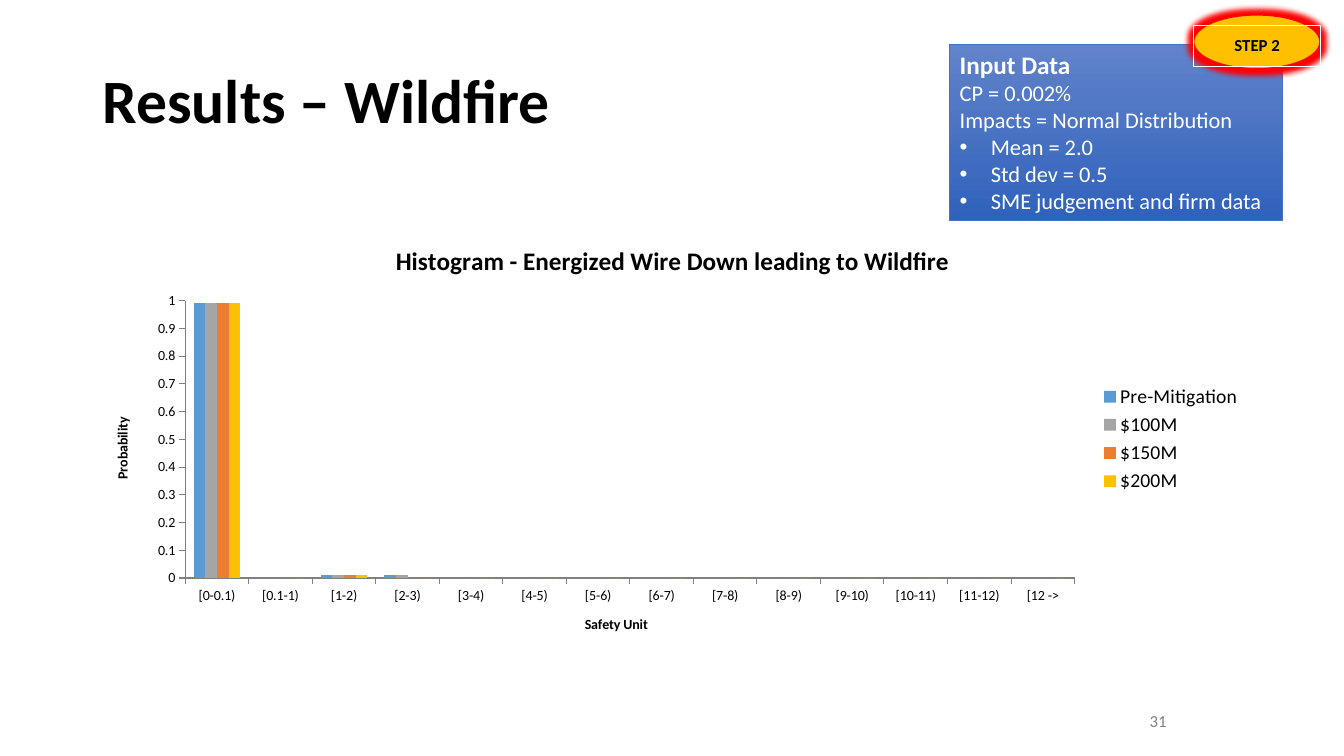
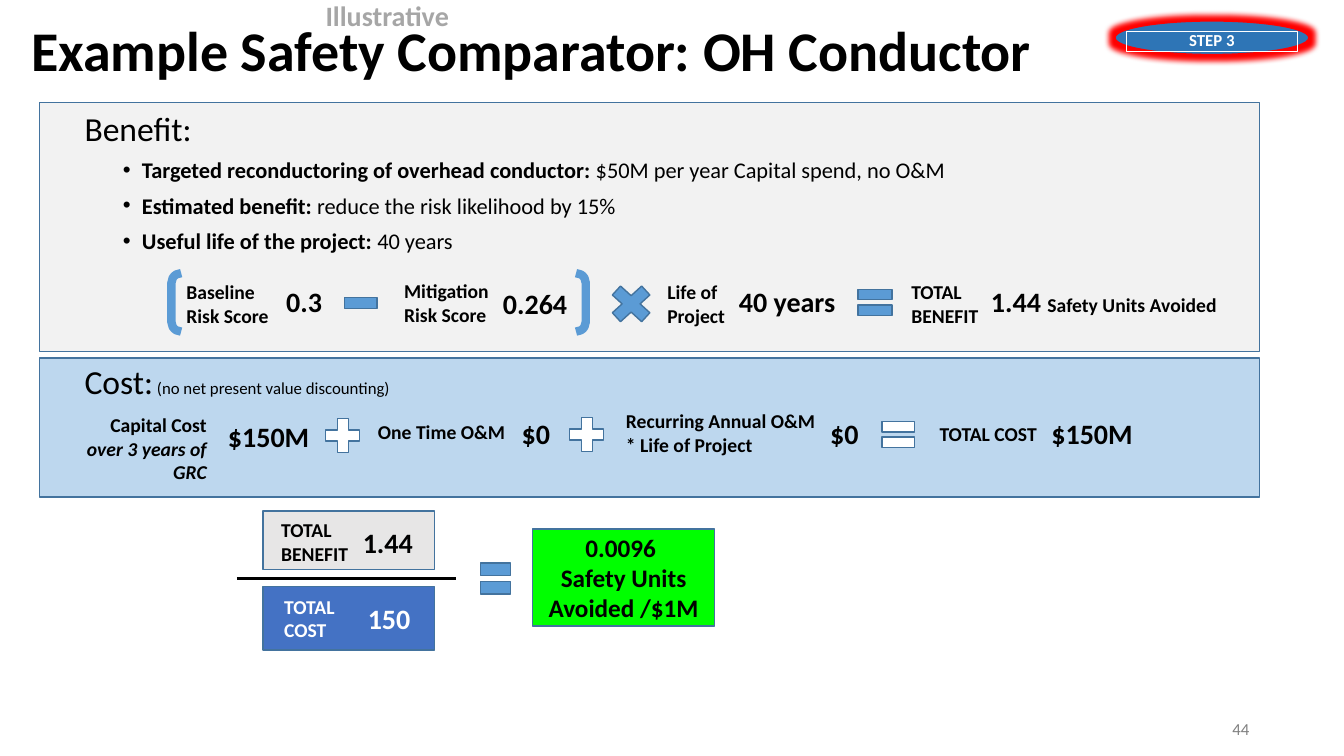
from lxml import etree
from pptx import Presentation
from pptx.chart.data import CategoryChartData
from pptx.dml.color import RGBColor
from pptx.enum.chart import XL_CHART_TYPE, XL_LEGEND_POSITION, XL_TICK_MARK
from pptx.enum.shapes import MSO_CONNECTOR, MSO_SHAPE
from pptx.enum.text import MSO_ANCHOR, PP_ALIGN
from pptx.oxml.ns import qn
from pptx.util import Inches, Pt

CLUSTERED = XL_CHART_TYPE.COLUMN_CLUSTERED
LEGEND_RIGHT = XL_LEGEND_POSITION.RIGHT
TICK_OUTSIDE = XL_TICK_MARK.OUTSIDE
STRAIGHT = MSO_CONNECTOR.STRAIGHT
RECTANGLE, ELLIPSE = MSO_SHAPE.RECTANGLE, MSO_SHAPE.OVAL
MINUS, TIMES = MSO_SHAPE.MATH_MINUS, MSO_SHAPE.MATH_MULTIPLY
EQUAL, PLUS = MSO_SHAPE.MATH_EQUAL, MSO_SHAPE.MATH_PLUS
BRACKETS = MSO_SHAPE.DOUBLE_BRACKET
TOP, MIDDLE = MSO_ANCHOR.TOP, MSO_ANCHOR.MIDDLE
LEFT, CENTER, RIGHT = PP_ALIGN.LEFT, PP_ALIGN.CENTER, PP_ALIGN.RIGHT

FONT = "Calibri"
COLORS = {
    "black": "000000", "white": "FFFFFF", "page number": "808080",
    "illustrative": "A6A6A6", "red": "FF0000", "outline": "43739E",
    "sky": "5B9BD5", "gray": "A5A5A5", "orange": "ED7D31", "gold": "FFC000",
    "royal": "4472C4", "deep blue": "2E75B6", "benefit": "F2F2F2",
    "cost": "BDD7EE", "ratio top": "E7E6E6", "result": "00FF00",
    "gradient top": "6183CB", "gradient bottom": "3062BB",
}
LABEL = {"size": Pt(14), "bold": True}
NUMBER = {"size": Pt(20), "bold": True}

BINS = ["[0-0.1)", "[0.1-1)", *(f"[{n}-{n + 1})" for n in range(1, 12)), "[12 ->"]
SERIES = [
    ("Pre-Mitigation", "sky", [0.99, 0, 0.01, 0.01]),
    ("$100M", "gray", [0.99, 0, 0.01, 0.01]),
    ("$150M", "orange", [0.99, 0, 0.01]),
    ("$200M", "gold", [0.99, 0, 0.01]),
]


def rgb(name):
    return RGBColor.from_string(COLORS[name])


def inches(values):
    return [Inches(value) for value in values]


def set_values(target, values):
    for name, value in values.items():
        setattr(target, name, value)


def set_font(font, color="black", **values):
    set_values(font, {"name": FONT, **values})
    font.color.rgb = rgb(color)


def add_bullet(para, indent, hang):
    properties = para._p.get_or_add_pPr()
    properties.set("marL", str(Inches(indent)))
    properties.set("indent", str(-Inches(hang)))
    etree.SubElement(properties, qn("a:buFont"), typeface="Arial")
    etree.SubElement(properties, qn("a:buChar"), char="•")


def write(shape, paragraphs, anchor=TOP, wrap=True, inset=None, bullet=None, **para_format):
    """Fill a shape; each paragraph is a list of (text, font values) spans.

    bullet is (first bulleted paragraph, indent, hang, space before).
    """
    frame = shape.text_frame
    set_values(frame, {"word_wrap": wrap, "vertical_anchor": anchor})
    if inset is not None:
        sides = ("left", "top", "right", "bottom")
        set_values(frame, {f"margin_{side}": Inches(inset) for side in sides})
    for index, spans in enumerate(paragraphs):
        para = frame.paragraphs[0] if index == 0 else frame.add_paragraph()
        set_values(para, {"alignment": LEFT, **para_format})
        if bullet and index >= bullet[0]:
            para.space_before = Pt(bullet[3])
            add_bullet(para, bullet[1], bullet[2])
        for text, values in spans:
            span = para.add_run()
            span.text = text
            set_font(span.font, **values)


def add_text(page, at, paragraphs, **options):
    write(page.shapes.add_textbox(*inches(at)), paragraphs, **options)


def add_shape(page, kind, at, fill=None, line="outline", width=1):
    shape = page.shapes.add_shape(kind, *inches(at))
    shape.shadow.inherit = False
    if fill:
        shape.fill.solid()
        shape.fill.fore_color.rgb = rgb(fill)
    else:
        shape.fill.background()
    shape.line.color.rgb = rgb(line)
    shape.line.width = Pt(width)
    return shape


def add_title(page, at, text, size, anchor):
    add_text(page, at, [[(text, {"size": Pt(size), "bold": True})]],
             anchor=anchor, line_spacing=0.9)


def add_page_number(page, at, number):
    add_text(page, at, [[(number, {"size": Pt(12), "color": "page number"})]],
             anchor=MIDDLE, alignment=RIGHT)


def add_step_badge(page, at, label_at, text, fill, color):
    """Glowing ellipse with a thinly framed label over it."""
    ellipse = add_shape(page, ELLIPSE, at, fill, "red", 0.75)
    effects = ellipse._element.spPr.find(qn("a:effectLst"))
    glow = etree.SubElement(effects, qn("a:glow"), rad=str(Pt(8)))
    etree.SubElement(glow, qn("a:srgbClr"), val=COLORS["red"])
    label = add_shape(page, RECTANGLE, label_at, None, "white", 0.75)
    write(label, [[(text, {"size": Pt(12), "bold": True, "color": color})]],
          anchor=MIDDLE, inset=0.02, alignment=CENTER, line_spacing=0.9)


def add_labels(page, labels, color="black"):
    for at, text in labels:
        add_text(page, at, [[(text, {**LABEL, "color": color})]])


def add_numbers(page, numbers, color="black", **options):
    for at, text in numbers:
        add_text(page, at, [[(text, {**NUMBER, "color": color})]], anchor=MIDDLE, **options)


def add_operators(page, operators, fill):
    for kind, at in operators:
        add_shape(page, kind, at, fill)


def title_text(owner, text, size):
    frame = owner.text_frame
    frame.text = text
    set_font(frame.paragraphs[0].runs[0].font, size=Pt(size), bold=True)


def add_histogram(page, at):
    data = CategoryChartData()
    data.categories = BINS
    for name, _, values in SERIES:
        data.add_series(name, values + [0] * (len(BINS) - len(values)))
    chart = page.shapes.add_chart(CLUSTERED, *inches(at), data).chart
    set_font(chart.font, size=Pt(10))
    chart.has_title = True
    title_text(chart.chart_title, "Histogram - Energized Wire Down leading to Wildfire", 18)
    chart.has_legend = True
    set_values(chart.legend, {"position": LEGEND_RIGHT, "include_in_layout": False})
    set_font(chart.legend.font, size=Pt(14))
    for axis, text in ((chart.category_axis, "Safety Unit"), (chart.value_axis, "Probability")):
        set_values(axis, {"has_major_gridlines": False, "major_tick_mark": TICK_OUTSIDE})
        title_text(axis.axis_title, text, 10)
        axis.format.line.color.rgb = rgb("page number")
    set_values(chart.value_axis, {"minimum_scale": 0, "maximum_scale": 1, "major_unit": 0.1})
    plot = chart.plots[0]
    set_values(plot, {"gap_width": 150, "overlap": 0, "vary_by_categories": False})
    for series, (_, color, _) in zip(plot.series, SERIES):
        series.format.fill.solid()
        series.format.fill.fore_color.rgb = rgb(color)


def add_input_data(page, at):
    box = add_shape(page, RECTANGLE, at, line="royal", width=0.5)
    box.fill.gradient()
    box.fill.gradient_angle = 270
    for stop, name in zip(box.fill.gradient_stops, ("gradient top", "gradient bottom")):
        stop.color.rgb = rgb(name)
    lines = ["CP = 0.002%", "Impacts = Normal Distribution", "Mean = 2.0",
             "Std dev = 0.5", "SME judgement and firm data"]
    heading = ("Input Data", {"size": Pt(18), "bold": True, "color": "white"})
    body = {"size": Pt(16), "color": "white"}
    write(box, [[heading], *([(line, body)] for line in lines)], bullet=(3, 0.31, 0.31, 0))


def add_benefit(page):
    add_shape(page, RECTANGLE, (0.39, 1.02, 12.1, 2.47), "benefit")
    points = [
        ("Targeted reconductoring of overhead conductor: ", "$50M per year Capital spend, no O&M"),
        ("Estimated benefit: ", "reduce the risk likelihood by 15%"),
        ("Useful life of the project: ", "40 years"),
    ]
    body = {"size": Pt(16)}
    paragraphs = [[(lead, {**body, "bold": True}), (rest, body)] for lead, rest in points]
    add_text(page, (0.74, 1.02, 11.7, 1.51), [[("Benefit:", {"size": Pt(24)})], *paragraphs],
             bullet=(1, 0.57, 0.19, 6))
    add_labels(page, [
        ((1.75, 2.73, 1.07, 0.57), "Baseline Risk Score"),
        ((3.91, 2.72, 1.1, 0.57), "Mitigation Risk Score"),
        ((6.52, 2.73, 0.95, 0.57), "Life of Project"),
        ((8.94, 2.73, 1.05, 0.57), "TOTAL BENEFIT"),
    ])
    add_numbers(page, [
        ((2.74, 2.77, 0.7, 0.44), "0.3"),
        ((4.89, 2.79, 0.87, 0.44), "0.264"),
        ((7.23, 2.77, 1.27, 0.44), "40 years"),
    ])
    add_text(page, (9.73, 2.77, 2.47, 0.44),
             [[("1.44 ", NUMBER), ("Safety Units Avoided", LABEL)]], anchor=MIDDLE)
    add_operators(page, [
        (MINUS, (3.36, 2.78, 0.44, 0.45)),
        (TIMES, (5.98, 2.76, 0.56, 0.51)),
        (EQUAL, (8.45, 2.78, 0.46, 0.44)),
    ], "sky")
    add_shape(page, BRACKETS, (1.7, 2.71, 4.11, 0.58), line="sky", width=6)


def add_cost(page):
    add_shape(page, RECTANGLE, (0.39, 3.55, 12.1, 1.38), "cost")
    add_text(page, (0.74, 3.53, 3.26, 0.5),
             [[("Cost:", {"size": Pt(24)}),
               (" (no net present value discounting)", {"size": Pt(12)})]], wrap=False)
    add_text(page, (0.39, 4.05, 1.76, 0.8),
             [[("Capital Cost", LABEL)], [("over 3 years of GRC", {**LABEL, "italic": True})]],
             alignment=RIGHT)
    add_labels(page, [
        ((3.65, 4.12, 1.6, 0.34), "One Time O&M"),
        ((6.11, 4.01, 2.18, 0.57), "Recurring Annual O&M * Life of Project"),
        ((9.22, 4.14, 1.38, 0.34), "TOTAL COST"),
    ])
    add_numbers(page, [
        ((2, 4.11, 1.33, 0.44), "$150M"),
        ((5.05, 4.08, 0.53, 0.44), "$0"),
        ((8.11, 4.08, 0.53, 0.44), "$0"),
    ], alignment=CENTER)
    add_numbers(page, [((10.33, 4.08, 1.15, 0.44), "$150M")])
    add_operators(page, [
        (PLUS, (3.17, 4.09, 0.46, 0.46)),
        (PLUS, (5.59, 4.08, 0.46, 0.46)),
        (EQUAL, (8.69, 4.09, 0.44, 0.44)),
    ], "white")


def add_ratio(page):
    """Benefit over cost, and the resulting score."""
    add_shape(page, RECTANGLE, (2.61, 5.07, 1.7, 0.58), "ratio top")
    add_shape(page, RECTANGLE, (2.61, 5.82, 1.7, 0.63), "royal")
    add_labels(page, [((2.69, 5.09, 1.05, 0.57), "TOTAL BENEFIT")])
    add_labels(page, [((2.72, 5.85, 0.9, 0.57), "TOTAL COST")], "white")
    add_numbers(page, [((3.5, 5.16, 0.76, 0.44), "1.44")])
    add_numbers(page, [((3.55, 5.91, 0.66, 0.44), "150")], "white")
    bar = page.shapes.add_connector(STRAIGHT, *inches((2.35, 5.74, 4.52, 5.74)))
    bar.line.color.rgb = rgb("black")
    bar.line.width = Pt(2.25)
    etree.SubElement(bar._element.spPr, qn("a:effectLst"))
    add_operators(page, [(EQUAL, (4.71, 5.48, 0.41, 0.52))], "sky")
    result = add_shape(page, RECTANGLE, (5.28, 5.25, 1.81, 0.96), "result")
    bold = {"size": Pt(18), "bold": True}
    write(result, [[("0.0096 ", bold)], [("Safety Units Avoided /$1M", bold)]],
          anchor=MIDDLE, alignment=CENTER)


def build_wildfire(page):
    add_title(page, (0.92, 0, 8.4, 2.05), "Results – Wildfire", 44, MIDDLE)
    add_page_number(page, (9.42, 6.95, 2.25, 0.4), "31")
    add_histogram(page, (0.92, 2.23, 11.5, 4.25))
    add_input_data(page, (9.42, 0.44, 3.3, 1.75))
    add_step_badge(page, (11.84, 0.15, 1.25, 0.53), (11.84, 0.25, 1.26, 0.41),
                   "STEP 2", "gold", "black")


def build_comparator(page):
    add_benefit(page)
    add_cost(page)
    add_ratio(page)
    add_title(page, (0.21, 0.18, 10.7, 0.73), "Example Safety Comparator: OH Conductor", 40, TOP)
    add_page_number(page, (9.49, 7.03, 3, 0.4), "44")
    add_step_badge(page, (11.06, 0.21, 1.92, 0.33), (11.17, 0.31, 1.7, 0.2),
                   "STEP 3", "deep blue", "white")
    add_text(page, (3.13, -0.06, 3.39, 0.44),
             [[("Illustrative", {**NUMBER, "color": "illustrative"})]])


def main():
    deck = Presentation()
    deck.slide_width, deck.slide_height = inches((13.33, 7.5))
    for build in (build_wildfire, build_comparator):
        build(deck.slides.add_slide(deck.slide_layouts[6]))
    deck.save("out.pptx")


if __name__ == "__main__":
    main()
